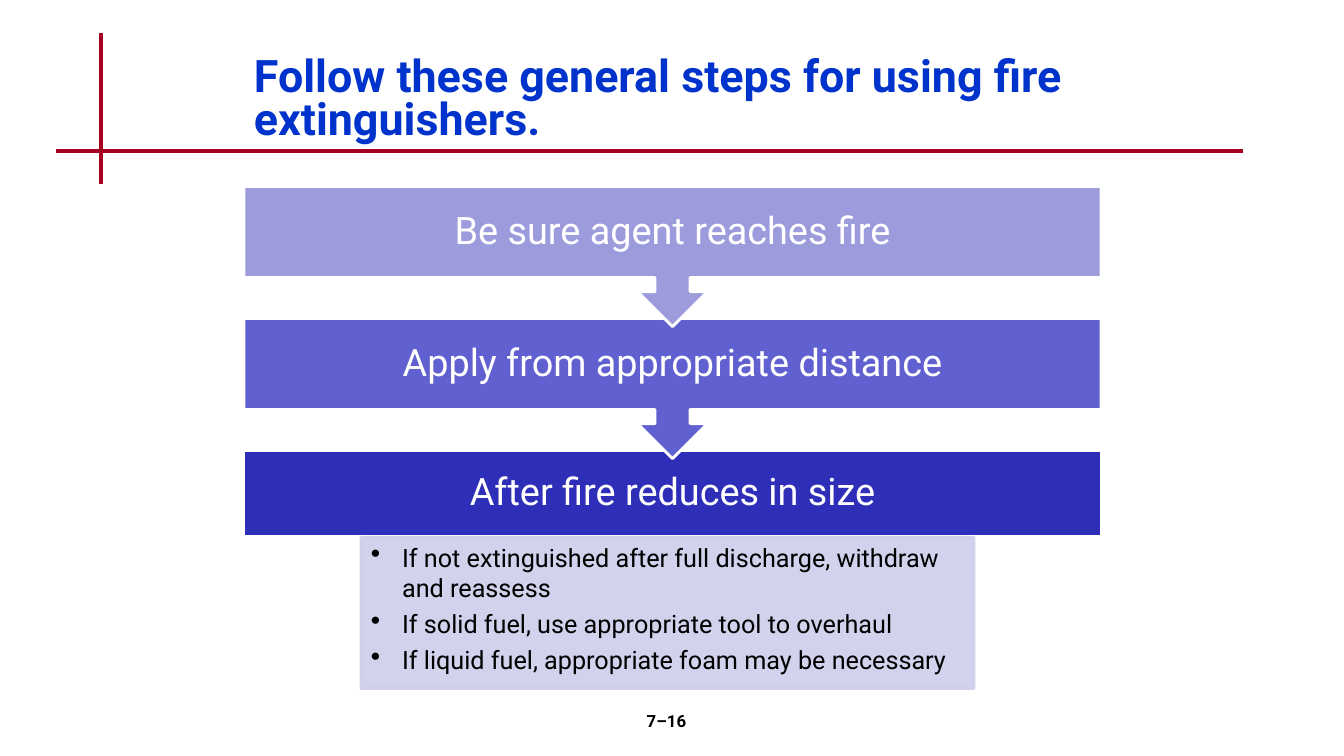
from lxml import etree
from pptx import Presentation
from pptx import util as u
from pptx.dml import color
from pptx.enum import shapes, text
from pptx.oxml import ns

COLORS = {
    "rule": "A50021", "title": "0033CC", "white": "FFFFFF", "black": "000000",
    "light": "9C9CDD", "medium": "6060D0", "dark": "2E2EB9", "panel": "CECEEC",
}
STEPS = [
    ("Be sure agent reaches fire", "light"),
    ("Apply from appropriate distance", "medium"),
    ("After fire reduces in size", "dark"),
]
OUTCOMES = [
    "If not extinguished after full discharge, withdraw and reassess",
    "If solid fuel, use appropriate tool to overhaul",
    "If liquid fuel, appropriate foam may be necessary",
]
LEFT, WIDTH = 2.42, 8.5
FIRST_TOP, STEP_PITCH = 1.85, 1.31
CALLOUT_HEIGHT, CALLOUT_BODY, LAST_HEIGHT = 1.39, 0.9, 0.85


class SlideBuilder:
    """Draw styled elements on the current slide."""

    font = "Roboto"

    def __init__(self, page):
        self.page = page

    def rgb(self, name):
        return color.RGBColor.from_string(COLORS[name])

    def rule(self, x1, y1, x2, y2):
        line = self.page.shapes.add_connector(
            shapes.MSO_CONNECTOR.STRAIGHT, *map(u.Inches, (x1, y1, x2, y2)))
        line.line.color.rgb = self.rgb("rule")
        line.line.width = u.Pt(3)
        etree.SubElement(line._element.spPr, ns.qn("a:effectLst"))

    def block(self, kind, place, fill, outline="white", rotation=0):
        shape = self.page.shapes.add_shape(kind, *map(u.Inches, place))
        shape.shadow.inherit = False
        shape.rotation = rotation
        shape.fill.solid()
        shape.fill.fore_color.rgb = self.rgb(fill)
        shape.line.color.rgb = self.rgb(outline)
        shape.line.width = u.Pt(2)
        return shape

    def set_text(self, frame, lines, size, ink, bold=False,
                 align=text.PP_ALIGN.LEFT, anchor=text.MSO_ANCHOR.TOP, spacing=None):
        frame.word_wrap = True
        frame.vertical_anchor = anchor
        frame.text = "\n".join(lines)
        for para in frame.paragraphs:
            para.alignment = align
            para.line_spacing = spacing
            for span in para.runs:
                span.font.name = self.font
                span.font.size = u.Pt(size)
                span.font.bold = bold
                span.font.color.rgb = self.rgb(ink)

    def label(self, place, words, size, ink, inset=None, **style):
        box = self.page.shapes.add_textbox(*map(u.Inches, place))
        frame = box.text_frame
        if inset is not None:
            frame.margin_left = frame.margin_right = u.Inches(inset)
            frame.margin_top = frame.margin_bottom = u.Inches(inset)
        self.set_text(frame, [words], size, ink, **style)

    def bullet_panel(self, place, lines):
        panel = self.block(shapes.MSO_SHAPE.RECTANGLE, place, "panel", "panel")
        for shade in panel._element.spPr.iter(ns.qn("a:srgbClr")):
            etree.SubElement(shade, ns.qn("a:alpha"), val="90000")
        self.set_text(panel.text_frame, lines, 18, "black")
        for index, para in enumerate(panel.text_frame.paragraphs):
            if index:
                para.space_before = u.Pt(4.2)
            props = para._p.get_or_add_pPr()
            props.set("marL", str(u.Inches(0.31)))
            props.set("indent", str(u.Inches(-0.31)))
            etree.SubElement(props, ns.qn("a:buSzPct"), val="110000")
            etree.SubElement(props, ns.qn("a:buChar"), char="•")


def main():
    deck = Presentation()
    deck.slide_width, deck.slide_height = u.Inches(13.33), u.Inches(7.5)
    slide = SlideBuilder(deck.slides.add_slide(deck.slide_layouts[6]))
    center, middle = text.PP_ALIGN.CENTER, text.MSO_ANCHOR.MIDDLE

    slide.rule(1, 0.33, 1, 1.83)
    slide.rule(0.56, 1.5, 12.33, 1.5)
    slide.label((LEFT, 0.5, WIDTH, 1),
                "Follow these general steps for using fire extinguishers.",
                32, "title", bold=True, anchor=middle, spacing=0.8)

    last = len(STEPS) - 1
    for index in range(last, -1, -1):
        words, fill = STEPS[index]
        top = FIRST_TOP + index * STEP_PITCH
        if index == last:
            body = LAST_HEIGHT
            slide.block(shapes.MSO_SHAPE.RECTANGLE, (LEFT, top, WIDTH, body), fill)
        else:
            body = CALLOUT_BODY
            slide.block(shapes.MSO_SHAPE.UP_ARROW_CALLOUT,
                        (LEFT, top, WIDTH, CALLOUT_HEIGHT), fill, rotation=180)
        slide.label((LEFT, top, WIDTH, body), words, 27, "white", inset=0.21,
                    align=center, anchor=middle, spacing=0.9)

    slide.label((5.22, 7, 2.78, 0.5), "7–16", 12, "black", bold=True, align=center)
    slide.bullet_panel((3.58, 5.33, 6.08, 1.5), OUTCOMES)
    deck.save("out.pptx")


if __name__ == "__main__":
    main()
